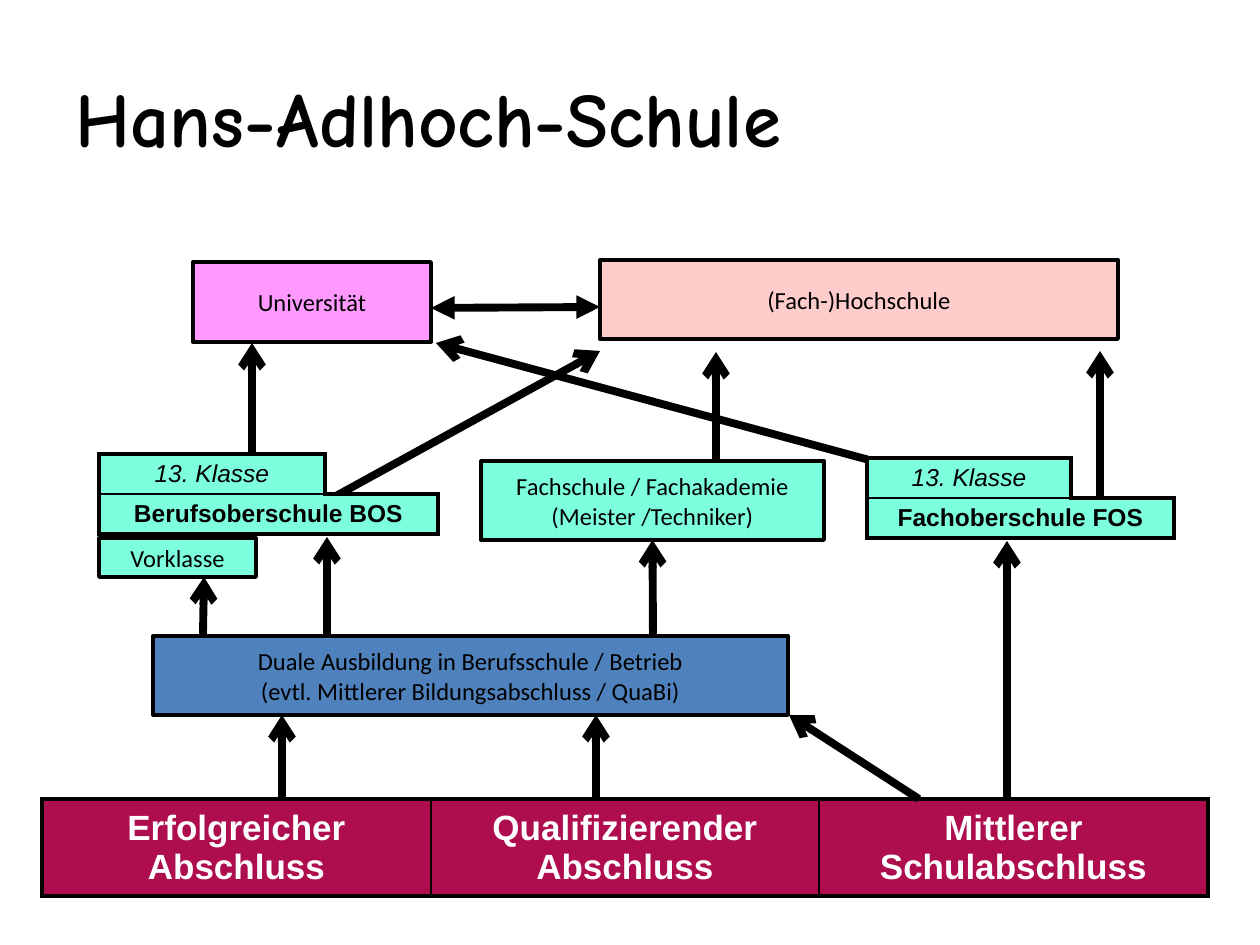
import pptx
import pptx.util
import pptx.dml.color
import pptx.enum.text
import pptx.enum.shapes
import pptx.oxml.ns
from lxml import etree

SCALE = 914400 / 126
INK = {"black": "000000", "white": "FFFFFF", "wine": "AE0D4E", "blue": "4F81BD",
       "mint": "7DFFDD", "rose": "FFCCCC", "pink": "FF99FF"}
THICK, THIN, NONE = 2.25, 1, 0
CENTER = pptx.enum.text.PP_ALIGN.CENTER
MIDDLE = pptx.enum.text.MSO_ANCHOR.MIDDLE


def emu(px):
    return pptx.util.Emu(round(px * SCALE))


def color(name):
    return pptx.dml.color.RGBColor.from_string(INK[name])


def tag(name):
    return pptx.oxml.ns.qn("a:" + name)


class Board:
    def __init__(self, deck):
        self.slide = deck.slides.add_slide(deck.slide_layouts[5])
        self.shapes = self.slide.shapes

    def label(self, para, text, size, font, ink="black", bold=False, italic=False):
        run = para.add_run()
        run.text = text
        run.font.size = pptx.util.Pt(size)
        run.font.name = font
        run.font.bold, run.font.italic = bold, italic
        run.font.color.rgb = color(ink)

    def title(self, text, *area):
        head = self.shapes.title
        head.left, head.top, head.width, head.height = map(emu, area)
        head.text_frame.vertical_anchor = MIDDLE
        para = head.text_frame.paragraphs[0]
        para.alignment = pptx.enum.text.PP_ALIGN.LEFT
        self.label(para, text, 44, "Comic Neue", bold=True)

    def box(self, lines, fill, *area):
        kind = pptx.enum.shapes.MSO_SHAPE.RECTANGLE
        box = self.shapes.add_shape(kind, *map(emu, area))
        box.shadow.inherit = False
        box.fill.solid()
        box.fill.fore_color.rgb = color(fill)
        box.line.color.rgb = color("black")
        box.line.width = pptx.util.Pt(THICK)
        frame = box.text_frame
        frame.word_wrap = False
        frame.vertical_anchor = MIDDLE
        for i, line in enumerate(lines):
            para = frame.add_paragraph() if i else frame.paragraphs[0]
            para.alignment = CENTER
            self.label(para, line, 14, "Calibri")
        return box

    def arrow(self, x1, y1, x2, y2, tip="arrow", both=False):
        kind = pptx.enum.shapes.MSO_CONNECTOR.STRAIGHT
        line = self.shapes.add_connector(kind, *map(emu, (x1, y1, x2, y2)))
        line.line.color.rgb = color("black")
        line.line.width = pptx.util.Pt(4.5)
        stroke = line._element.spPr.find(tag("ln"))
        for end in ("headEnd", "tailEnd") if both else ("tailEnd",):
            etree.SubElement(stroke, tag(end), type=tip)
        etree.SubElement(line._element.spPr, tag("effectLst"))
        return line

    def grid(self, cols, rows, x, y):
        area = map(emu, (x, y, sum(cols), sum(rows)))
        table = self.shapes.add_table(len(rows), len(cols), *area).table
        table.first_row = table.horz_banding = False
        for col, width in zip(table.columns, cols):
            col.width = emu(width)
        for row, height in zip(table.rows, rows):
            row.height = emu(height)
        return table

    def cell(self, cell, fill, left, right, top, bottom):
        cell.vertical_anchor = MIDDLE
        cell.margin_top = cell.margin_bottom = 0
        if fill:
            cell.fill.solid()
            cell.fill.fore_color.rgb = color(fill)
        else:
            cell.fill.background()
        props = cell._tc.get_or_add_tcPr()
        sides = zip(("lnL", "lnR", "lnT", "lnB"), (left, right, top, bottom))
        for i, (side, width) in enumerate(sides):
            edge = etree.Element(tag(side), w=str(int(width * 12700)))
            if width:
                paint = etree.SubElement(edge, tag("solidFill"))
                etree.SubElement(paint, tag("srgbClr"), val=INK["black"])
            else:
                etree.SubElement(edge, tag("noFill"))
            props.insert(i, edge)
        para = cell.text_frame.paragraphs[0]
        para.alignment = CENTER
        return para

    def school(self, name, cols, x, y):
        table = self.grid(cols, (40, 40), x, y)
        para = self.cell(table.cell(0, 0), "mint", THICK, THICK, THICK, THIN)
        self.label(para, "13. Klasse", 14, "Arial", italic=True)
        self.cell(table.cell(0, 1), None, THICK, NONE, NONE, THICK)
        table.cell(1, 0).merge(table.cell(1, 1))
        para = self.cell(table.cell(1, 0), "mint", THICK, THICK, THIN, THICK)
        self.label(para, name, 14, "Arial", bold=True)
        self.cell(table.cell(1, 1), "mint", NONE, THICK, THICK, THICK)

    def base(self, names, cols, height, x, y):
        table = self.grid(cols, (height,), x, y)
        last = len(names) - 1
        for i, name in enumerate(names):
            left = THIN if i else THICK
            right = THIN if i < last else THICK
            para = self.cell(table.cell(0, i), "wine", left, right, THICK, THICK)
            self.label(para, name, 20, "Arial", "white", bold=True)


def main():
    deck = pptx.Presentation()
    deck.slide_width, deck.slide_height = emu(1260), emu(945)
    board = Board(deck)
    board.title("Hans-Adlhoch-Schule", 63, 38, 1134, 158)

    # Leaving certificates
    board.base(("Erfolgreicher Abschluss", "Qualifizierender Abschluss",
                "Mittlerer Schulabschluss"), (389, 388, 389), 97, 42, 799)

    # Training and higher education
    board.box(("Duale Ausbildung in Berufsschule / Betrieb",
               "(evtl. Mittlerer Bildungsabschluss / QuaBi)"), "blue", 153, 636, 635, 79)
    college = board.box(("Fachschule / Fachakademie", "(Meister /Techniker)"),
                        "mint", 481, 461, 343, 79)
    board.box(("(Fach-)Hochschule",), "rose", 600, 260, 518, 79)
    board.box(("Universität",), "pink", 193, 262, 238, 80)

    # Paths from the certificates
    for path in ((282, 799, 282, 715), (596, 799, 596, 715),
                 (919, 799, 789, 715), (1007, 799, 1007, 541)):
        board.arrow(*path)

    # Paths from the training
    board.arrow(327, 636, 327, 537)
    board.arrow(653, 634, 653, 540).end_connect(college, 2)

    # Paths to higher education
    for path in ((716, 462, 716, 352), (252, 455, 252, 343), (336, 496, 600, 351)):
        board.arrow(*path)
    board.school("Berufsoberschule BOS", (226, 113), 99, 454)
    board.arrow(873, 461, 436, 343)
    board.school("Fachoberschule FOS", (204, 103), 867, 458)
    board.arrow(1100, 499, 1100, 351)

    # Preparatory class
    board.box(("Vorklasse",), "mint", 99, 538, 157, 39)
    board.arrow(203, 634, 204, 577)

    # Exchange between the two kinds of university
    board.arrow(431, 308, 600, 307, "triangle", both=True)
    deck.save("out.pptx")


if __name__ == "__main__":
    main()
